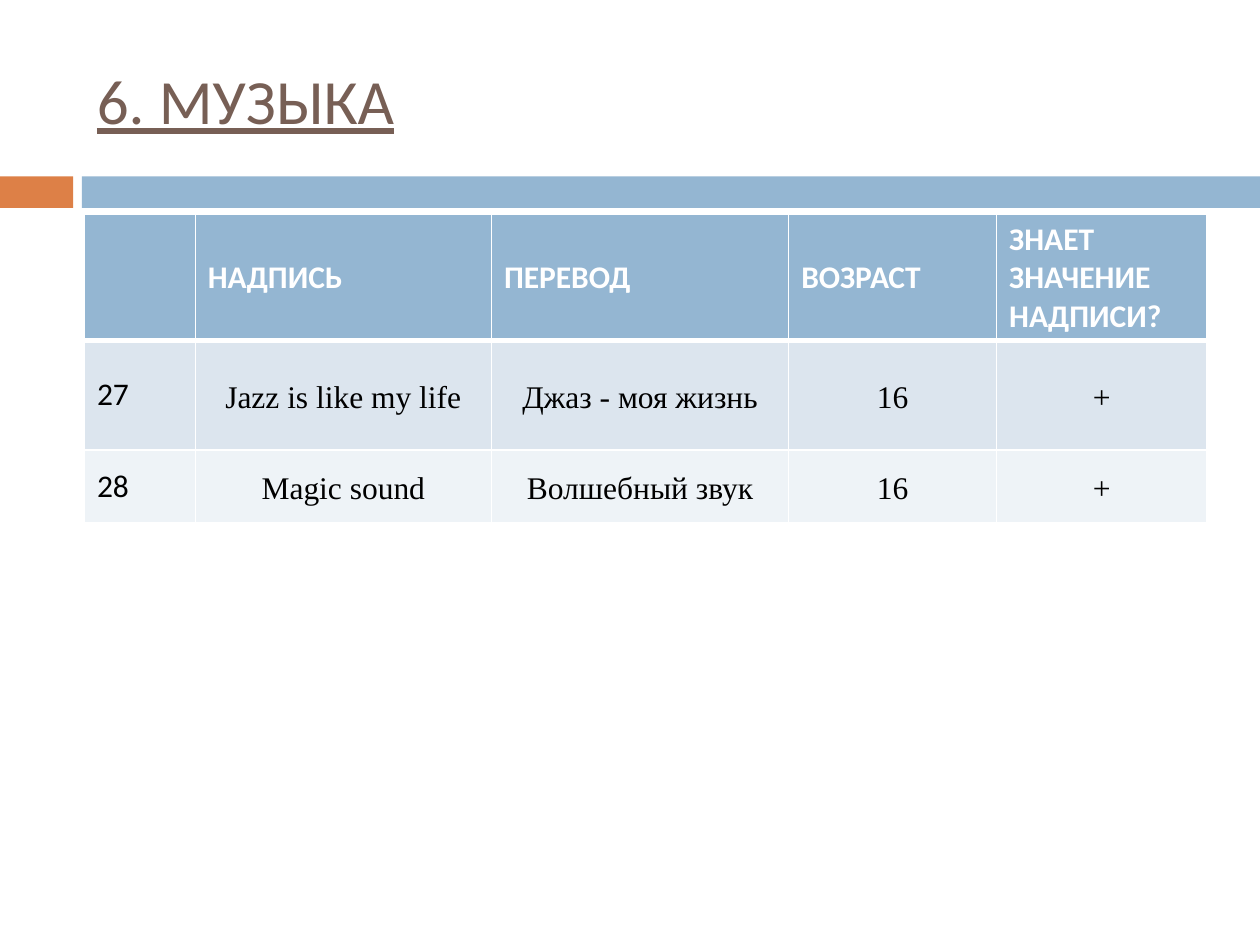
from dataclasses import dataclass

from lxml import etree
from pptx import Presentation
from pptx import util as u
from pptx.dml.color import RGBColor
from pptx.enum import shapes, text
from pptx.oxml import ns

COLORS = {
    "orange": "DD8047", "blue": "94B6D2", "brown": "775F55", "white": "FFFFFF",
    "black": "000000", "band_dark": "DCE5EE", "band_light": "EEF3F7",
}
COLUMN_WIDTHS = (0.88, 2.35, 2.36, 1.65, 1.67)


@dataclass(frozen=True)
class Bar:
    left: float
    width: float
    color: str


@dataclass(frozen=True)
class Row:
    height: float
    fill: str
    values: tuple[str, ...]
    top_border: float = 1
    bottom_border: float = 1


@dataclass(frozen=True)
class Style:
    font: str
    size: float
    color: str
    bold: bool = False
    underline: bool = False


TITLE = Style("Calibri", 36, "brown", underline=True)
HEADER = Style("Calibri", 18, "white", bold=True)
NUMBER = Style("Calibri", 18, "black")
BODY = Style("Times New Roman", 18, "black")

BARS = (Bar(0, 0.58, "orange"), Bar(0.65, 9.35, "blue"))
ROWS = (
    Row(1, "blue", ("", "НАДПИСЬ", "ПЕРЕВОД", "ВОЗРАСТ", "ЗНАЕТ ЗНАЧЕНИЕ НАДПИСИ?"),
        bottom_border=3),
    Row(0.87, "band_dark", ("27", "Jazz is like my life", "Джаз - моя жизнь", "16", "+"),
        top_border=3),
    Row(0.58, "band_light", ("28", "Magic sound", "Волшебный звук", "16", "+")),
)


def rgb(name: str) -> RGBColor:
    return RGBColor.from_string(COLORS[name])


def add_run(paragraph, words: str, style: Style) -> None:
    run = paragraph.add_run()
    run.text = words
    run.font.name = style.font
    run.font.size = u.Pt(style.size)
    run.font.bold = style.bold
    run.font.underline = style.underline
    run.font.color.rgb = rgb(style.color)


def add_bar(slide, bar: Bar) -> None:
    shape = slide.shapes.add_shape(
        shapes.MSO_SHAPE.RECTANGLE,
        u.Inches(bar.left), u.Inches(1.4), u.Inches(bar.width), u.Inches(0.25))
    shape.shadow.inherit = False
    shape.fill.solid()
    shape.fill.fore_color.rgb = rgb(bar.color)
    shape.line.fill.background()


def add_title(slide, words: str) -> None:
    box = slide.shapes.add_textbox(
        u.Inches(0.67), u.Inches(0.25), u.Inches(8.92), u.Inches(1.08))
    frame = box.text_frame
    frame.word_wrap = True
    frame.vertical_anchor = text.MSO_ANCHOR.MIDDLE
    add_run(frame.paragraphs[0], words, TITLE)


def set_borders(cell, row: Row) -> None:
    properties = cell._tc.get_or_add_tcPr()
    widths = {"lnL": 1, "lnR": 1, "lnT": row.top_border, "lnB": row.bottom_border}
    for position, (side, width) in enumerate(widths.items()):
        line = etree.Element(ns.qn(f"a:{side}"), w=str(u.Pt(width)))
        fill = etree.SubElement(line, ns.qn("a:solidFill"))
        etree.SubElement(fill, ns.qn("a:srgbClr"), val=COLORS["white"])
        properties.insert(position, line)


def fill_cell(cell, row: Row, words: str, style: Style) -> None:
    cell.fill.solid()
    cell.fill.fore_color.rgb = rgb(row.fill)
    set_borders(cell, row)
    cell.vertical_anchor = text.MSO_ANCHOR.MIDDLE
    paragraph = cell.text_frame.paragraphs[0]
    if style is BODY:
        cell.margin_left = cell.margin_right = u.Inches(0.07)
        cell.margin_top = cell.margin_bottom = 0
        paragraph.alignment = text.PP_ALIGN.CENTER
        paragraph.line_spacing = 1.15
    if words:
        add_run(paragraph, words, style)


def add_inscriptions(slide) -> None:
    table = slide.shapes.add_table(
        len(ROWS), len(COLUMN_WIDTHS), u.Inches(0.67), u.Inches(1.7),
        u.Inches(sum(COLUMN_WIDTHS)), u.Inches(sum(row.height for row in ROWS))).table
    for column, width in zip(table.columns, COLUMN_WIDTHS):
        column.width = u.Inches(width)
    for row_index, row in enumerate(ROWS):
        table.rows[row_index].height = u.Inches(row.height)
        for column_index, words in enumerate(row.values):
            style = HEADER if row_index == 0 else NUMBER if column_index == 0 else BODY
            fill_cell(table.cell(row_index, column_index), row, words, style)


def main() -> None:
    """Build the slide about music inscriptions."""
    presentation = Presentation()
    presentation.slide_width = u.Inches(10)
    presentation.slide_height = u.Inches(7.5)
    slide = presentation.slides.add_slide(presentation.slide_layouts[6])
    for bar in BARS:
        add_bar(slide, bar)
    add_title(slide, "6. МУЗЫКА")
    add_inscriptions(slide)
    presentation.save("out.pptx")


if __name__ == "__main__":
    main()
